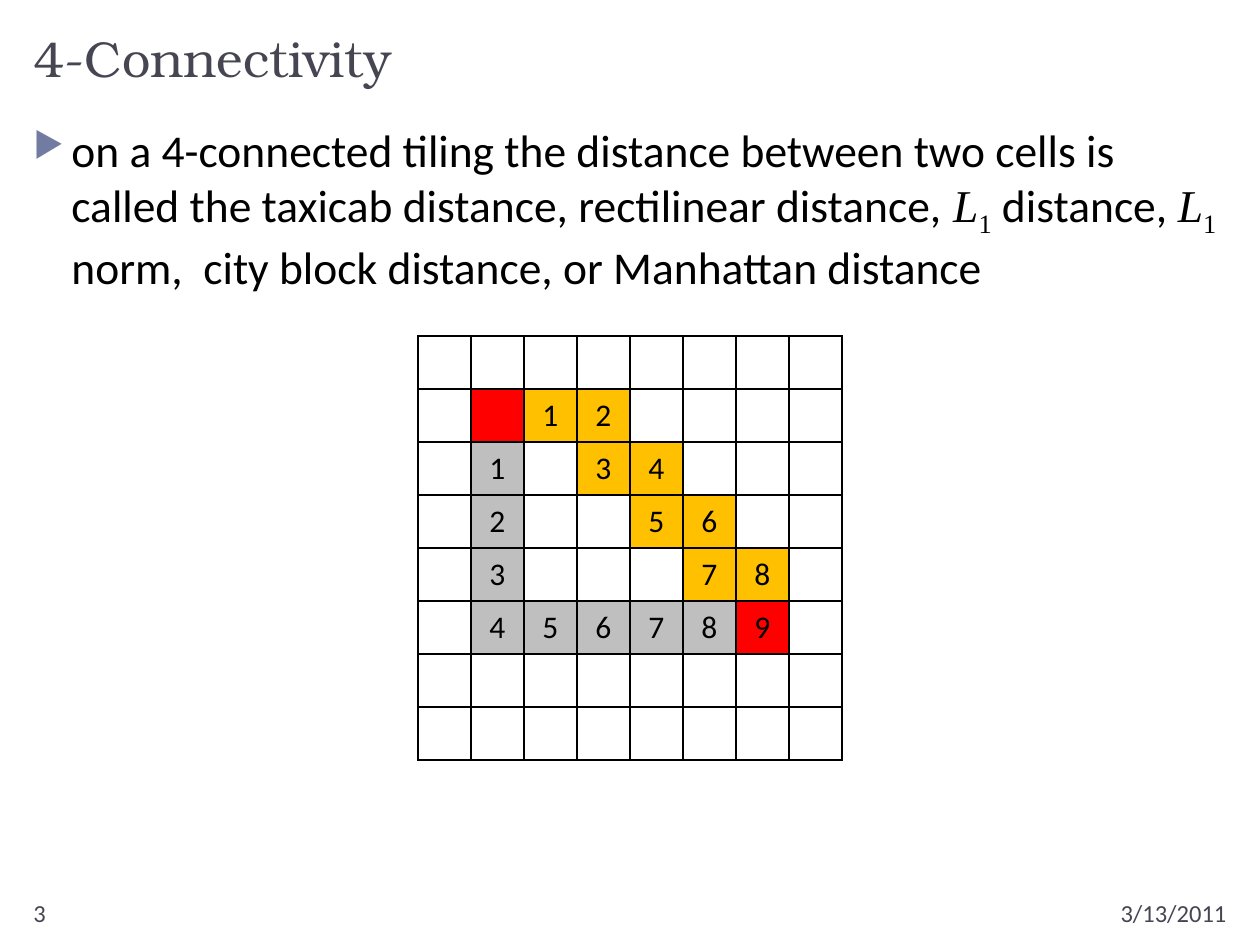
"""Build the 4-Connectivity slide with two taxicab paths on a grid."""
from lxml import etree
from pptx import Presentation
from pptx.dml.color import RGBColor
from pptx.enum.text import MSO_ANCHOR, PP_ALIGN
from pptx.oxml.ns import qn
from pptx.util import Pt

LEFT, CENTER, RIGHT = PP_ALIGN.LEFT, PP_ALIGN.CENTER, PP_ALIGN.RIGHT
TOP, MIDDLE, BOTTOM = MSO_ANCHOR.TOP, MSO_ANCHOR.MIDDLE, MSO_ANCHOR.BOTTOM
PX = 914400 / 126
THEME = {
    "slate": "464653", "black": "000000", "white": "FFFFFF", "bullet": "727CA3",
    "red": "FF0000", "gold": "FFC000", "grey": "BFBFBF",
    "title": {"name": "TeX Gyre Bonum", "size": Pt(28.8)},
    "body": {"name": "Calibri", "size": Pt(26)},
    "symbol": {"name": "Times New Roman", "size": Pt(26), "italic": True},
    "index": {"name": "Times New Roman", "size": Pt(26)},
    "cell": {"name": "Calibri", "size": Pt(18)},
    "footer": {"name": "Calibri", "size": Pt(14)},
}


def place(shape, left, top, width, height):
    for name, value in zip(("left", "top", "width", "height"), (left, top, width, height)):
        setattr(shape, name, round(value * PX))


def write(para, text, style, color, align=LEFT):
    para.alignment = align
    span = para.add_run()
    span.text = text
    for name, value in THEME[style].items():
        setattr(span.font, name, value)
    span.font.color.rgb = RGBColor.from_string(THEME[color])
    return span


deck = Presentation()
deck.slide_width, deck.slide_height = round(1260 * PX), round(945 * PX)
page = deck.slides.add_slide(deck.slide_layouts[5])

title = page.shapes.title
place(title, 21, 21, 1218, 73)
title.text_frame.vertical_anchor = BOTTOM
write(title.text_frame.paragraphs[0], "4-Connectivity", "title", "slate")

for text, left, width, align in (("3/13/2011", 1008, 231, RIGHT), ("3", 21, 273, LEFT)):
    box = page.shapes.add_textbox(0, 0, 0, 0)
    place(box, left, 892, width, 34)
    box.text_frame.word_wrap = True
    write(box.text_frame.paragraphs[0], text, "footer", "slate", align)

body = page.shapes.add_textbox(0, 0, 0, 0)
place(body, 21, 116, 1218, 756)
body.text_frame.word_wrap = True
body.text_frame.vertical_anchor = TOP
para = body.text_frame.paragraphs[0]
para.space_before = Pt(6)
for text, style in (
    ("on a 4-connected tiling the distance between two cells is called "
     "the taxicab distance, rectilinear distance, ", "body"),
    ("L", "symbol"), ("1", "index"), (" distance, ", "body"),
    ("L", "symbol"), ("1", "index"),
    (" norm,  city block distance, or Manhattan distance", "body"),
):
    span = write(para, text, style, "black")
    if style == "index":
        span.font._element.set("baseline", "-25000")

properties = para._p.get_or_add_pPr()
indent = round(38 * PX)
properties.set("marL", str(indent))
properties.set("indent", str(-indent))
bullet_color = etree.SubElement(properties, qn("a:buClr"))
etree.SubElement(bullet_color, qn("a:srgbClr"), val=THEME["bullet"])
etree.SubElement(properties, qn("a:buSzPct"), val="76000")
etree.SubElement(properties, qn("a:buChar"), char="▶")

cells = {(1, 1): ("", "red"), (5, 6): ("9", "red")}
for step in range(1, 9):
    cells[(step + 1) // 2, 2 + step // 2] = (str(step), "gold")
    cells[min(1 + step, 5), max(1, step - 3)] = (str(step), "grey")

count, side = 8, 53
frame = page.shapes.add_table(count, count, 0, 0, 0, 0)
place(frame, 418, 336, count * side, count * side)
grid = frame.table
for track in (*grid.columns, *grid.rows):
    setattr(track, "width" if hasattr(track, "width") else "height", round(side * PX))

for row in range(count):
    for column in range(count):
        text, color = cells.get((row, column), ("", "white"))
        cell = grid.cell(row, column)
        cell.vertical_anchor = MIDDLE
        if text:
            write(cell.text_frame.paragraphs[0], text, "cell", "black", CENTER)
        cell_properties = cell._tc.get_or_add_tcPr()
        for edge in ("lnL", "lnR", "lnT", "lnB"):
            line = etree.SubElement(cell_properties, qn(f"a:{edge}"), w=str(Pt(1)))
            line_fill = etree.SubElement(line, qn("a:solidFill"))
            etree.SubElement(line_fill, qn("a:srgbClr"), val=THEME["black"])
        cell.fill.solid()
        cell.fill.fore_color.rgb = RGBColor.from_string(THEME[color])

deck.save("out.pptx")
